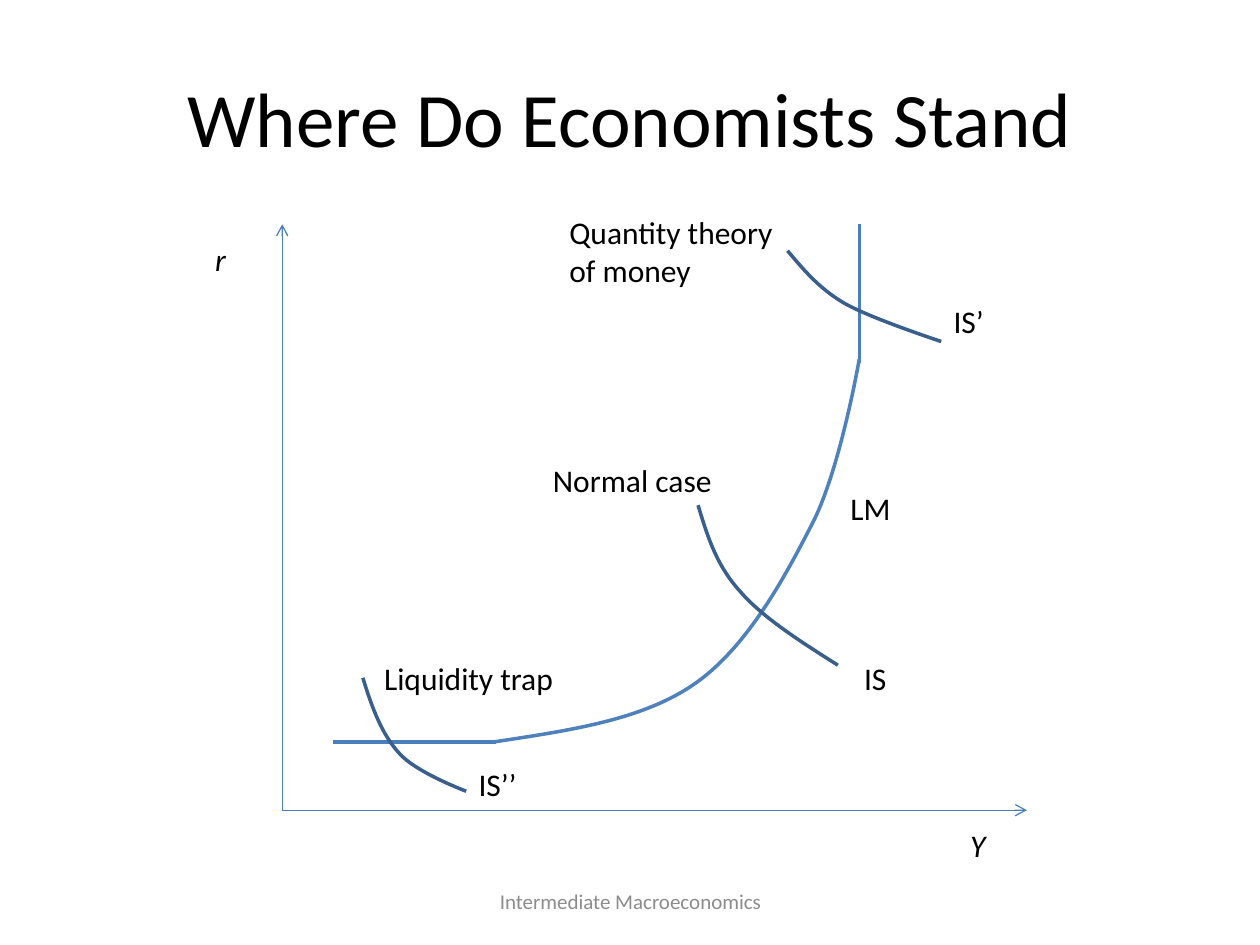
from lxml import etree
from pptx import Presentation
from pptx import util as u
from pptx.dml.color import RGBColor
from pptx.enum import shapes, text
from pptx.oxml.ns import qn

Inches = u.Inches
AXIS, LM, IS = "4B7EBC", "4F81BD", "3A5F8C"


def color(hex_string):
    return RGBColor.from_string(hex_string)


def write(shape, words, size, hex_string="000000", align=None, italic=None):
    frame = shape.text_frame
    frame.word_wrap = True
    frame.text = words
    paragraph = frame.paragraphs[0]
    paragraph.alignment = align
    font = paragraph.runs[0].font
    font.name, font.size, font.italic = "Calibri", u.Pt(size), italic
    font.color.rgb = color(hex_string)


presentation = Presentation()
presentation.slide_width, presentation.slide_height = Inches(10), Inches(7.5)
slide = presentation.slides.add_slide(presentation.slide_layouts[5])

# Title
title = slide.shapes.title
title.left, title.top, title.width, title.height = map(Inches, (0.5, 0.3, 9, 1.25))
title.text_frame.vertical_anchor = text.MSO_ANCHOR.MIDDLE
write(title, "Where Do Economists Stand", 44, align=text.PP_ALIGN.CENTER)

# Footer
footer = slide.shapes.add_textbox(*map(Inches, (3.42, 6.95, 3.17, 0.4)))
footer.text_frame.vertical_anchor = text.MSO_ANCHOR.MIDDLE
write(footer, "Intermediate Macroeconomics", 12, "8C8C8C", text.PP_ALIGN.CENTER)

# Axes with arrowheads, then the flat and vertical ends of LM
for start_x, start_y, end_x, end_y, weight, is_axis in [
    (2.24, 6.43, 8.15, 6.43, 0.75, True),
    (2.24, 6.43, 2.24, 1.78, 0.75, True),
    (2.64, 5.89, 3.94, 5.89, 2, False),
    (6.82, 1.78, 6.82, 2.88, 2, False),
]:
    line = slide.shapes.add_connector(
        shapes.MSO_CONNECTOR.STRAIGHT, *map(Inches, (start_x, start_y, end_x, end_y)))
    line.line.color.rgb = color(AXIS)
    line.line.width = u.Pt(weight)
    properties = line.element.spPr
    if is_axis:
        etree.SubElement(properties.find(qn("a:ln")), qn("a:tailEnd"), type="arrow")
    etree.SubElement(properties, qn("a:effectLst"))

# Curves: a start point, then three Bezier points for each segment
curves = [
    (LM, [(3.91, 5.89), (4.5, 5.8), (5.09, 5.72), (5.51, 5.43),
          (5.93, 5.14), (6.23, 4.58), (6.45, 4.15),
          (6.67, 3.72), (6.82, 2.85), (6.82, 2.85)]),
    (IS, [(6.25, 1.99), (6.37, 2.13), (6.49, 2.28), (6.69, 2.4),
          (6.89, 2.52), (7.47, 2.71), (7.47, 2.71)]),
    (IS, [(5.54, 4.01), (5.61, 4.24), (5.68, 4.48), (5.87, 4.69),
          (6.05, 4.9), (6.35, 5.09), (6.65, 5.28)]),
    (IS, [(2.88, 5.38), (2.95, 5.61), (3.03, 5.83), (3.17, 5.98),
          (3.3, 6.13), (3.7, 6.28), (3.7, 6.28)]),
]
for curve_color, points in curves:
    start, *rest = [(Inches(x), Inches(y)) for x, y in points]
    builder = slide.shapes.build_freeform(*start)
    builder.add_line_segments(rest, close=False)
    curve = builder.convert_to_shape()
    curve.shadow.inherit = False
    curve.fill.background()
    curve.line.color.rgb = color(curve_color)
    curve.line.width = u.Pt(2)
    # Join every three straight segments into one cubic Bezier
    segments = list(curve.element.iter(qn("a:lnTo")))
    for first in range(0, len(segments), 3):
        bezier = etree.Element(qn("a:cubicBezTo"))
        segments[first].addprevious(bezier)
        for segment in segments[first:first + 3]:
            bezier.append(segment[0])
            segment.getparent().remove(segment)

# Labels
for words, left, top, width, height, italic in [
    ("LM", 6.65, 3.83, 0.55, 0.4, None),
    ("IS’", 7.47, 2.35, 0.44, 0.4, None),
    ("IS", 6.76, 5.18, 0.44, 0.4, None),
    ("IS’’", 3.7, 6.02, 0.59, 0.4, None),
    ("Quantity theory of money", 4.42, 1.64, 1.89, 0.71, None),
    ("Liquidity trap", 2.95, 5.18, 1.73, 0.4, None),
    ("Normal case", 4.29, 3.61, 1.5, 0.4, None),
    ("r", 1.61, 1.86, 0.47, 0.4, True),
    ("Y", 7.6, 6.51, 0.55, 0.4, True),
]:
    label = slide.shapes.add_textbox(*map(Inches, (left, top, width, height)))
    write(label, words, 18, italic=italic)
    label.text_frame.auto_size = text.MSO_AUTO_SIZE.SHAPE_TO_FIT_TEXT

presentation.save("out.pptx")
